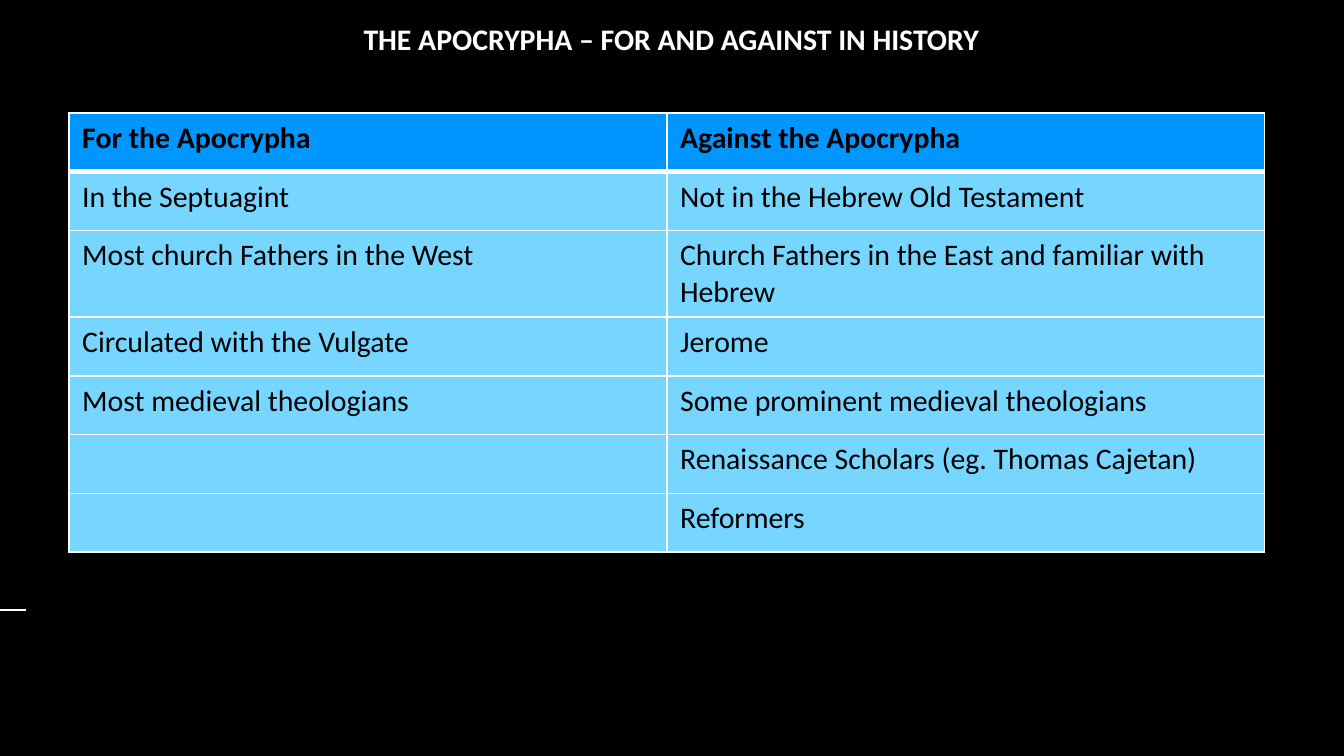
from dataclasses import dataclass

from lxml import etree
from pptx import Presentation
from pptx.dml.color import RGBColor
from pptx.enum.shapes import MSO_CONNECTOR
from pptx.enum.text import MSO_ANCHOR, PP_ALIGN
from pptx.oxml.ns import qn
from pptx.util import Cm, Pt

STRAIGHT = MSO_CONNECTOR.STRAIGHT
MIDDLE = MSO_ANCHOR.MIDDLE
CENTER = PP_ALIGN.CENTER

TITLE = "THE APOCRYPHA – FOR AND AGAINST IN HISTORY"
ARGUMENTS = [
    ("For the Apocrypha", "Against the Apocrypha"),
    ("In the Septuagint", "Not in the Hebrew Old Testament"),
    ("Most church Fathers in the West",
     "Church Fathers in the East and familiar with Hebrew"),
    ("Circulated with the Vulgate", "Jerome"),
    ("Most medieval theologians", "Some prominent medieval theologians"),
    ("", "Renaissance Scholars (eg. Thomas Cajetan)"),
    ("", "Reformers"),
]


@dataclass(frozen=True)
class Theme:
    font: str = "Calibri"
    text_size: int = 16
    background: str = "000000"
    light: str = "FFFFFF"
    dark: str = "000000"
    header: str = "0096FF"
    body: str = "76D6FF"
    rule: float = 0.75
    border: int = 1
    header_border: int = 3


THEME = Theme()


def rgb(color):
    return RGBColor.from_string(color)


def format_text(text_frame, color, bold):
    for paragraph in text_frame.paragraphs:
        for run in paragraph.runs:
            run.font.name = THEME.font
            run.font.size = Pt(THEME.text_size)
            run.font.bold = bold
            run.font.color.rgb = rgb(color)


def set_borders(cell, widths):
    """Draw the left, right, top and bottom borders; call before filling the cell."""
    properties = cell._tc.get_or_add_tcPr()
    for side, width in zip("LRTB", widths):
        line = etree.SubElement(properties, qn(f"a:ln{side}"), w=str(Pt(width)))
        fill = etree.SubElement(line, qn("a:solidFill"))
        etree.SubElement(fill, qn("a:srgbClr"), val=THEME.light)


def add_title(slide):
    title = slide.shapes.title
    title.left, title.top, title.width, title.height = (
        Cm(6.38), Cm(0.3), Cm(12.62), Cm(0.86))
    frame = title.text_frame
    frame.text = TITLE
    frame.word_wrap = True
    frame.vertical_anchor = MIDDLE
    frame.margin_top = frame.margin_bottom = 0
    frame.paragraphs[0].alignment = CENTER
    format_text(frame, THEME.light, True)


def add_arguments(slide):
    row_height = Cm(1.11)
    table = slide.shapes.add_table(
        len(ARGUMENTS), len(ARGUMENTS[0]), Cm(1.3), Cm(2.14),
        Cm(22.6), row_height * len(ARGUMENTS)).table
    for row_index, entries in enumerate(ARGUMENTS):
        table.rows[row_index].height = row_height
        is_header = row_index == 0
        top = THEME.header_border if row_index == 1 else THEME.border
        bottom = THEME.header_border if is_header else THEME.border
        for column_index, entry in enumerate(entries):
            cell = table.cell(row_index, column_index)
            set_borders(cell, (THEME.border, THEME.border, top, bottom))
            cell.fill.solid()
            cell.fill.fore_color.rgb = rgb(THEME.header if is_header else THEME.body)
            cell.text_frame.text = entry
            format_text(cell.text_frame, THEME.dark, is_header)


def add_edge_rule(slide):
    rule = slide.shapes.add_connector(STRAIGHT, Cm(-0.4), Cm(11.53), Cm(0.5), Cm(11.53))
    rule.line.color.rgb = rgb(THEME.light)
    rule.line.width = Pt(THEME.rule)
    etree.SubElement(rule._element.spPr, qn("a:effectLst"))


def main():
    presentation = Presentation()
    presentation.slide_width, presentation.slide_height = Cm(25.4), Cm(14.29)
    slide = presentation.slides.add_slide(
        presentation.slide_layouts.get_by_name("Title Only"))
    slide.background.fill.solid()
    slide.background.fill.fore_color.rgb = rgb(THEME.background)
    add_edge_rule(slide)
    add_title(slide)
    add_arguments(slide)
    presentation.save("out.pptx")


if __name__ == "__main__":
    main()
